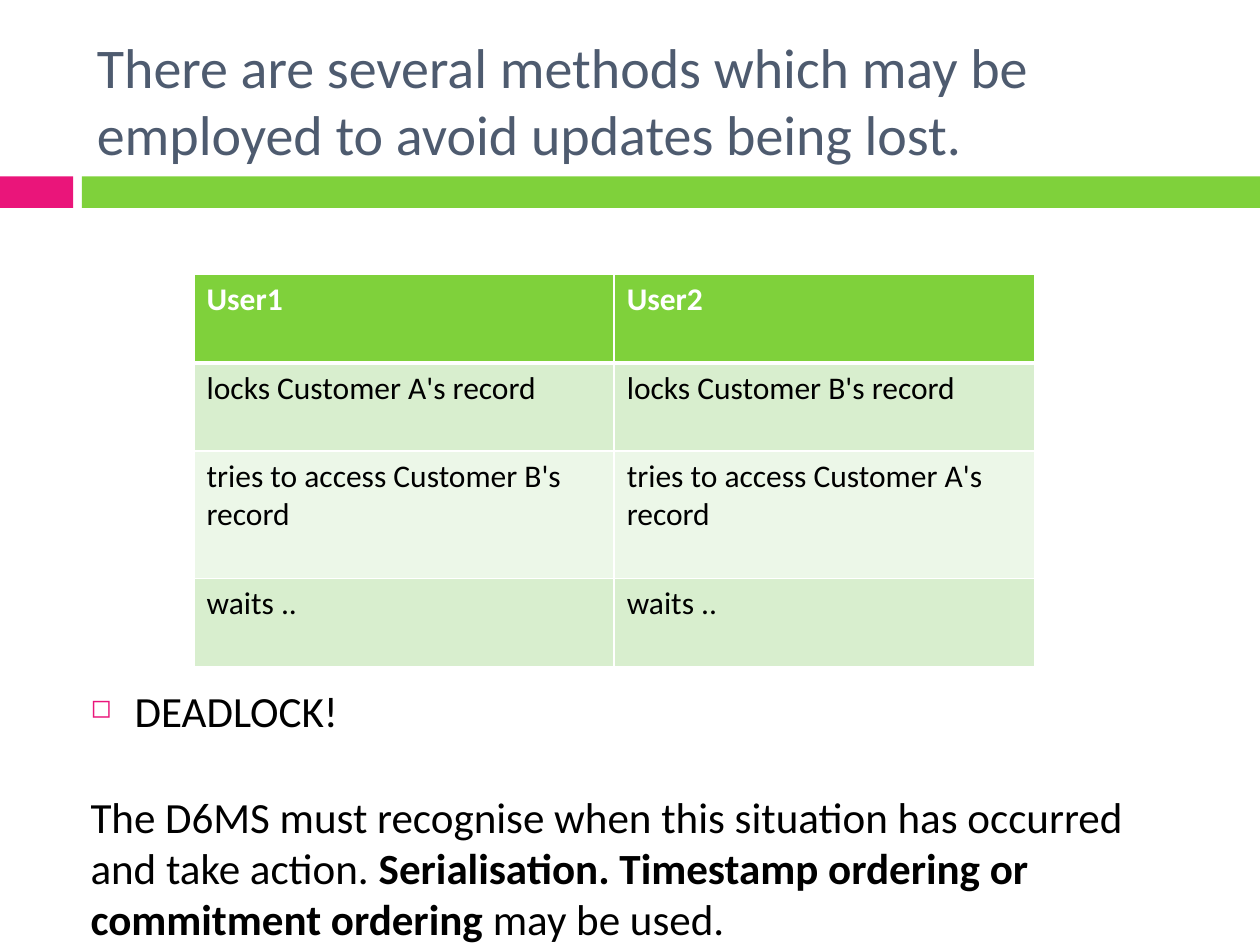
from lxml import etree
from pptx import Presentation
from pptx.dml.color import RGBColor
from pptx.enum.shapes import MSO_SHAPE as Shape
from pptx.enum.text import MSO_ANCHOR as Anchor
from pptx.oxml.ns import qn
from pptx.util import Inches, Pt

FONT = "Calibri"
COLORS = {
    "title": "4E5B6F", "text": "000000", "white": "FFFFFF",
    "pink": "EA157A", "green": "7FD13B",
    "band_dark": "D8EECE", "band_light": "ECF7E8",
}
ROWS = [
    ("User1", "User2"),
    ("locks Customer A's record", "locks Customer B's record"),
    ("tries to access Customer B's record", "tries to access Customer A's record"),
    ("waits ..", "waits .."),
]
ROW_HEIGHTS = [0.7, 0.7, 1.01, 0.7]
ACTION = [
    ("The D6MS must recognise when this situation has occurred and take action. ", False),
    ("Serialisation. Timestamp ordering or commitment ordering ", True),
    ("may be used.", False),
]


def rgb(name):
    return RGBColor.from_string(COLORS[name])


def style(span, size, color, bold=False):
    span.font.name = FONT
    span.font.size = Pt(size)
    span.font.bold = bold
    span.font.color.rgb = rgb(color)


def add_bar(page, left, width, color):
    bar = page.shapes.add_shape(
        Shape.RECTANGLE, Inches(left), Inches(1.4), Inches(width), Inches(0.25))
    bar.shadow.inherit = False
    bar.fill.solid()
    bar.fill.fore_color.rgb = rgb(color)
    bar.line.fill.background()


def add_text_frame(page, left, top, width, height, anchor):
    box = page.shapes.add_textbox(
        Inches(left), Inches(top), Inches(width), Inches(height))
    frame = box.text_frame
    frame.word_wrap = True
    frame.vertical_anchor = anchor
    return frame


def add_title(page):
    frame = add_text_frame(page, 0.67, 0.25, 8.92, 1.08, Anchor.MIDDLE)
    frame.text = "There are several methods which may be employed to avoid updates being lost."
    style(frame.paragraphs[0].runs[0], 32, "title")


def add_bullet(para, indent):
    """Give the paragraph a small pink square with a hanging indent."""
    props = para._p.get_or_add_pPr()
    props.set("marL", str(Inches(indent)))
    props.set("indent", str(-Inches(indent)))
    color = etree.SubElement(props, qn("a:buClr"))
    etree.SubElement(color, qn("a:srgbClr"), val=COLORS["pink"])
    etree.SubElement(props, qn("a:buSzPct"), val="60000")
    etree.SubElement(props, qn("a:buChar"), char="◻")


def add_body(page):
    frame = add_text_frame(page, 0.62, 5.38, 8.95, 2.1, Anchor.TOP)
    deadlock = frame.paragraphs[0]
    deadlock.text = "DEADLOCK!"
    style(deadlock.runs[0], 24.6, "text")
    add_bullet(deadlock, 0.35)

    action = frame.add_paragraph()
    action.space_before = Pt(33)
    action.line_spacing = 0.98
    for text, bold in ACTION:
        span = action.add_run()
        span.text = text
        style(span, 24.6, "text", bold)


def set_borders(cell, top, bottom):
    props = cell._tc.get_or_add_tcPr()
    for side, points in (("L", 1), ("R", 1), ("T", top), ("B", bottom)):
        line = etree.SubElement(props, qn(f"a:ln{side}"), w=str(Pt(points)))
        fill = etree.SubElement(line, qn("a:solidFill"))
        etree.SubElement(fill, qn("a:srgbClr"), val=COLORS["white"])


def add_user_table(page):
    table = page.shapes.add_table(
        len(ROWS), 2, Inches(1.54), Inches(2.18), Inches(6.67),
        Inches(sum(ROW_HEIGHTS))).table
    fills = ["green", "band_dark", "band_light", "band_dark"]
    for row, (texts, height) in enumerate(zip(ROWS, ROW_HEIGHTS)):
        table.rows[row].height = Inches(height)
        header = row == 0
        for column, text in enumerate(texts):
            cell = table.cell(row, column)
            set_borders(cell, 3 if row == 1 else 1, 3 if header else 1)
            cell.fill.solid()
            cell.fill.fore_color.rgb = rgb(fills[row])
            cell.text_frame.text = text
            style(cell.text_frame.paragraphs[0].runs[0], 18,
                  "white" if header else "text", header)


def main():
    deck = Presentation()
    deck.slide_width, deck.slide_height = Inches(10), Inches(7.5)
    page = deck.slides.add_slide(deck.slide_layouts[6])
    add_bar(page, 0, 0.58, "pink")
    add_bar(page, 0.65, 9.35, "green")
    add_title(page)
    add_body(page)
    add_user_table(page)
    deck.save("out.pptx")


if __name__ == "__main__":
    main()
